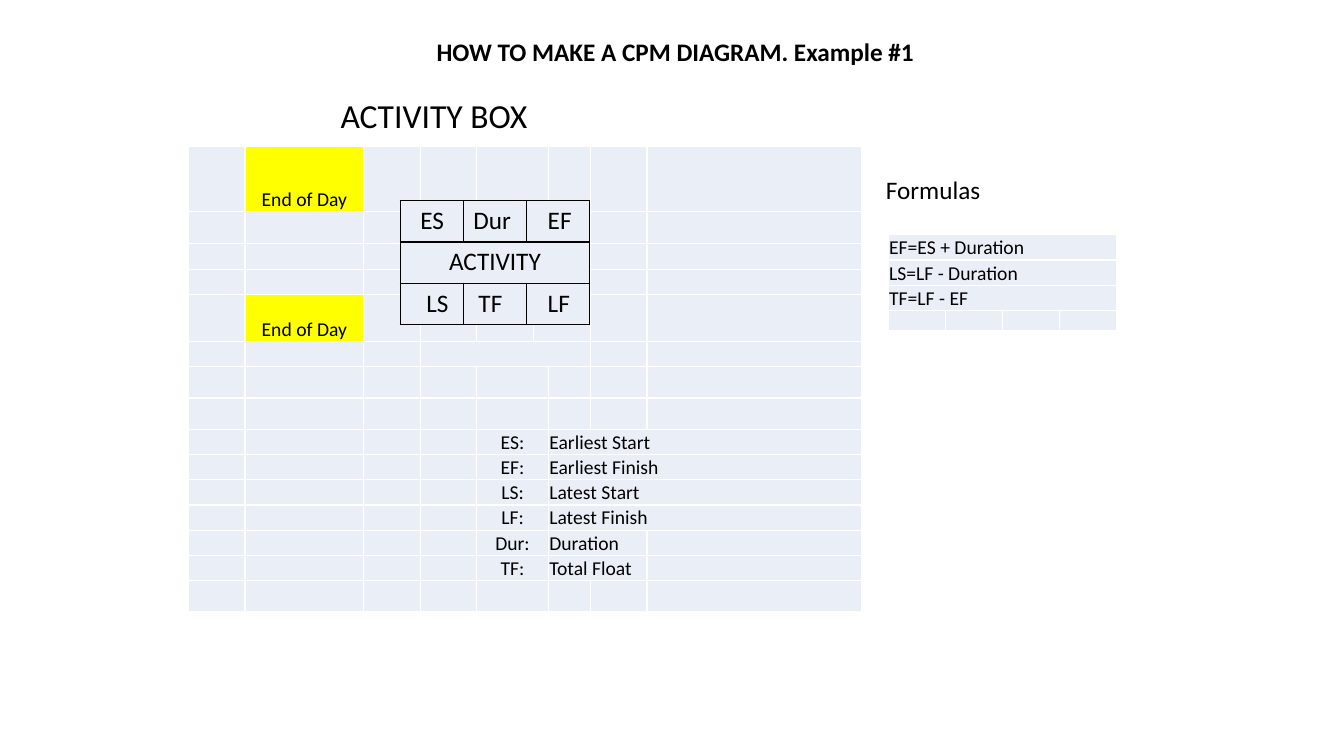
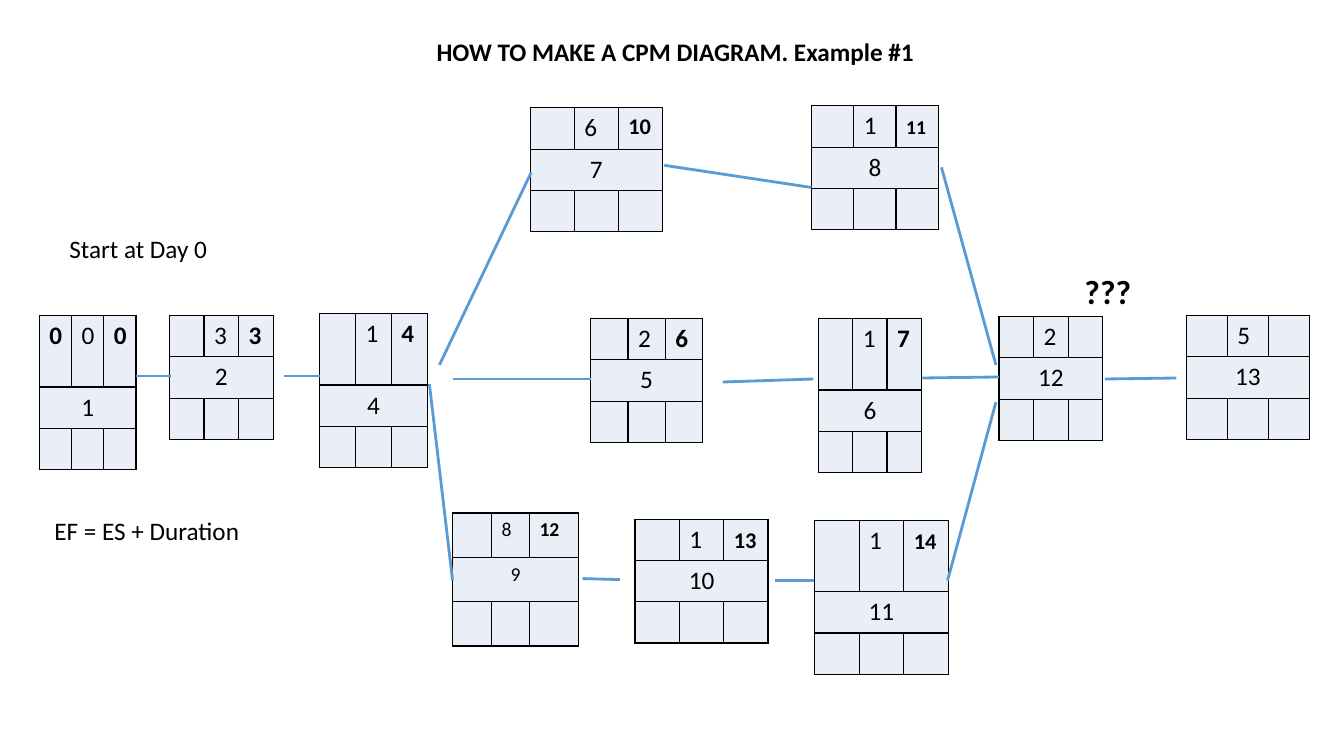
import dataclasses

import lxml.etree
import pptx
import pptx.dml.color
import pptx.enum.shapes
import pptx.enum.text
import pptx.oxml.ns
import pptx.util

COLORS = {"text": "000000", "cell": "EAEFF7", "mark": "FFFF00",
          "light": "FFFFFF", "dark": "000000", "link": "5B9BD5"}
FONT = "Calibri"
CELL = 0.1
TITLE = "HOW TO MAKE A CPM DIAGRAM. Example #1"
ALIGN = pptx.enum.text.PP_ALIGN
ANCHOR = pptx.enum.text.MSO_ANCHOR
TIGHT = (0.1, 0.1, 0.1, 0)
ROOMY = (1, 0.5, 1, 0.5)


@dataclasses.dataclass
class Activity:
    name: str
    left: float
    top: float
    width: float
    duration: str
    finish: str = ""
    start: str = ""
    rows: tuple = (4.1, 4.1, 4.1)
    shares: tuple = (1 / 3, 1 / 3, 1 / 3)
    size: int = 18
    finish_size: int = 18
    finish_drop: float = 0


TALL = (7.1, 4.1, 4.1)
ACTIVITIES = [
    Activity("1", 3.9, 31.3, 9.6, "0", "0", "0", rows=TALL),
    Activity("2", 16.8, 31.3, 10.3, "3", "3"),
    Activity("4", 31.7, 31.1, 10.7, "1", "4", rows=TALL),
    Activity("5", 58.6, 31.6, 11.1, "2", "6"),
    Activity("6", 81.2, 31.6, 10.2, "1", "7", rows=TALL),
    Activity("12", 99.1, 31.4, 10.3, "2"),
    Activity("13", 117.7, 31.3, 12.2, "5"),
    Activity("7", 52.6, 10.7, 13.1, "6", "10", finish_size=16),
    Activity("8", 80.5, 10.5, 12.6, "1", "11", finish_size=14, finish_drop=0.5),
    Activity("9", 44.9, 50.9, 12.5, "8", "12", rows=(4.4, 4.4, 4.4),
             shares=(0.31, 0.3, 0.39), size=14, finish_size=14),
    Activity("10", 63, 51.5, 13.2, "1", "13", finish_size=16, finish_drop=0.3),
    Activity("11", 80.8, 51.6, 13.3, "1", "14", rows=TALL,
             finish_size=16, finish_drop=0.3),
]
LINKS = [
    (13.5, 37.3, 17, 37.3), (28.2, 37.3, 31.7, 37.3),
    (91.5, 37.5, 99.1, 37.4), (109.6, 37.6, 116.7, 37.5),
    (44.9, 37.6, 58.6, 37.6), (71.7, 37.9, 80.7, 37.6),
    (65.9, 16.4, 80.5, 18.6), (57.8, 57.4, 61.5, 57.5),
    (76.9, 57.6, 80.8, 57.6), (94, 57.6, 98.8, 39.9),
    (42.6, 38.1, 44.9, 57.6), (43.6, 36.2, 52.7, 17.1),
    (93.4, 16.6, 98.8, 36.2),
]
LEGEND = [("ES:", "Earliest Start"), ("EF:", "Earliest Finish"),
          ("LS:", "Latest Start"), ("LF:", "Latest Finish"),
          ("Dur:", "Duration"), ("TF:", "Total Float")]
FORMULAS = ["EF=ES + Duration", "LS=LF - Duration", "TF=LF - EF"]


def grid(count):
    return pptx.util.Inches(count * CELL)


def color(name):
    return pptx.dml.color.RGBColor.from_string(COLORS[name])


def style_para(para, size, bold=False, align=ALIGN.LEFT):
    para.alignment = align
    para.font.name = FONT
    para.font.size = pptx.util.Pt(size)
    para.font.bold = bold
    para.font.color.rgb = color("text")


def add_text(page, at, text, size, bold=False, align=ALIGN.LEFT, anchor=ANCHOR.TOP):
    box = page.shapes.add_textbox(*map(grid, at))
    frame = box.text_frame
    frame.word_wrap = True
    frame.vertical_anchor = anchor
    para = frame.paragraphs[0]
    para.text = text
    style_para(para, size, bold, align)
    return para


def add_border(cell, name):
    properties = cell._tc.get_or_add_tcPr()
    for side in ("a:lnL", "a:lnR", "a:lnT", "a:lnB"):
        line = lxml.etree.SubElement(
            properties, pptx.oxml.ns.qn(side), w=str(pptx.util.Pt(1)))
        fill = lxml.etree.SubElement(line, pptx.oxml.ns.qn("a:solidFill"))
        lxml.etree.SubElement(fill, pptx.oxml.ns.qn("a:srgbClr"), val=COLORS[name])


def set_margins(cell, margins):
    (cell.margin_left, cell.margin_top,
     cell.margin_right, cell.margin_bottom) = map(grid, margins)


def add_table(page, left, top, columns, rows, border, merges=()):
    frame = page.shapes.add_table(
        len(rows), len(columns), *map(grid, (left, top, sum(columns), sum(rows))))
    table = frame.table
    table.first_row = False
    table.horz_banding = False
    for column, width in zip(table.columns, columns):
        column.width = grid(width)
    for row, height in zip(table.rows, rows):
        row.height = grid(height)
    for cell in table.iter_cells():
        add_border(cell, border)
        cell.fill.solid()
        cell.fill.fore_color.rgb = color("cell")
        set_margins(cell, TIGHT)
        style_para(cell.text_frame.paragraphs[0], 10)
    for row, first, last in merges:
        table.cell(row, first).merge(table.cell(row, last))
    return table


def write_cell(cell, text, size, bold=False, align=ALIGN.LEFT,
               margins=TIGHT, anchor=ANCHOR.BOTTOM):
    para = cell.text_frame.paragraphs[0]
    para.text = text
    style_para(para, size, bold, align)
    set_margins(cell, margins)
    cell.vertical_anchor = anchor


def add_link(page, ends):
    line = page.shapes.add_connector(
        pptx.enum.shapes.MSO_CONNECTOR.STRAIGHT, *map(grid, ends))
    line.line.color.rgb = color("link")
    line.line.width = pptx.util.Pt(2)
    lxml.etree.SubElement(line._element.spPr, pptx.oxml.ns.qn("a:effectLst"))


def add_activity(page, activity):
    columns = [activity.width * share for share in activity.shares]
    table = add_table(page, activity.left, activity.top, columns,
                      activity.rows, "dark", [(1, 0, 2)])
    drop = (1, 0.5 + activity.finish_drop, 0, 0)
    plain = (1, 0.5, 0, 0)
    top_row = [(activity.start, activity.size, True, plain),
               (activity.duration, activity.size, False, plain),
               (activity.finish, activity.finish_size, True, drop)]
    for column, (text, size, bold, margins) in enumerate(top_row):
        if text:
            write_cell(table.cell(0, column), text, size, bold,
                       margins=margins, anchor=ANCHOR.TOP)
    write_cell(table.cell(1, 0), activity.name, activity.size,
               align=ALIGN.CENTER, margins=ROOMY, anchor=ANCHOR.TOP)


def add_legend(page):
    first = 8
    columns = [5.6, 11.8, 5.6, 5.6, 5.6, 1.5, 4.2, 5.6, 21.3]
    rows = [6.5, 3.2, 2.5, 2.5, 4.7, 2.5, 3.1, 3.1] + [2.5] * len(LEGEND) + [3.1]
    merges = [(row, 3, 6) for row in (2, 5)]
    merges += [(row, 5, 6) for row in (3, 4)]
    merges += [(row, 4, 5) for row in range(len(rows)) if row not in (2, 3, 4, 5)]
    merges += [(first + index, 6, 8 if index < 4 else 7)
               for index in range(len(LEGEND))]
    table = add_table(page, 18.7, 14.5, columns, rows, "light", merges)
    for row in (0, 4):
        cell = table.cell(row, 1)
        write_cell(cell, "End of Day", 14, align=ALIGN.CENTER)
        cell.fill.fore_color.rgb = color("mark")
    for row, (short, meaning) in enumerate(LEGEND, first):
        write_cell(table.cell(row, 4), short, 14, align=ALIGN.CENTER)
        write_cell(table.cell(row, 6), meaning, 14)


def add_activity_key(page):
    table = add_table(page, 39.7, 19.9, [6.27] * 3, [4.1] * 3, "dark", [(1, 0, 2)])
    labels = {0: [("ES", 2), ("Dur", 1), ("EF", 2.1)],
              2: [("LS", 2.6), ("TF", 1.5), ("LF", 2.1)]}
    for row, entries in labels.items():
        for column, (text, indent) in enumerate(entries):
            write_cell(table.cell(row, column), text, 18,
                       margins=(indent, 0.5, 0, 0.5), anchor=ANCHOR.TOP)
    write_cell(table.cell(1, 0), "ACTIVITY", 18, align=ALIGN.CENTER,
               margins=ROOMY, anchor=ANCHOR.TOP)


def add_formulas(page):
    merges = [(row, 0, 3) for row in range(len(FORMULAS))]
    table = add_table(page, 88.1, 23.3, [5.68] * 4, [2.5] * 3 + [2], "light", merges)
    for row, formula in enumerate(FORMULAS):
        write_cell(table.cell(row, 0), formula, 14)
    add_text(page, (86.9, 16.8, 16.8, 4), "Formulas", 18)


def add_page(deck):
    page = deck.slides.add_slide(deck.slide_layouts[6])
    para = add_text(page, (17, 3.7, 100, 3.4), TITLE, 18, True,
                    ALIGN.CENTER, ANCHOR.BOTTOM)
    para.line_spacing = 0.9
    return page


def build_key_page(deck):
    page = add_page(deck)
    add_text(page, (32.8, 9.4, 24, 5), "ACTIVITY BOX", 24).line_spacing = 0.9
    add_legend(page)
    add_activity_key(page)
    add_formulas(page)


def build_diagram_page(deck):
    page = add_page(deck)
    for activity in ACTIVITIES:
        add_activity(page, activity)
    for ends in LINKS:
        add_link(page, ends)
    add_text(page, (4.4, 50.6, 23.2, 4), "EF = ES + Duration", 18)
    add_text(page, (5.9, 22.7, 19.7, 7.1), "Start at Day 0", 18)
    add_text(page, (106.6, 26.4, 7.8, 5), "???", 24, True)


def main():
    deck = pptx.Presentation()
    deck.slide_width = grid(133.33)
    deck.slide_height = grid(75)
    build_key_page(deck)
    build_diagram_page(deck)
    deck.save("out.pptx")


if __name__ == "__main__":
    main()
